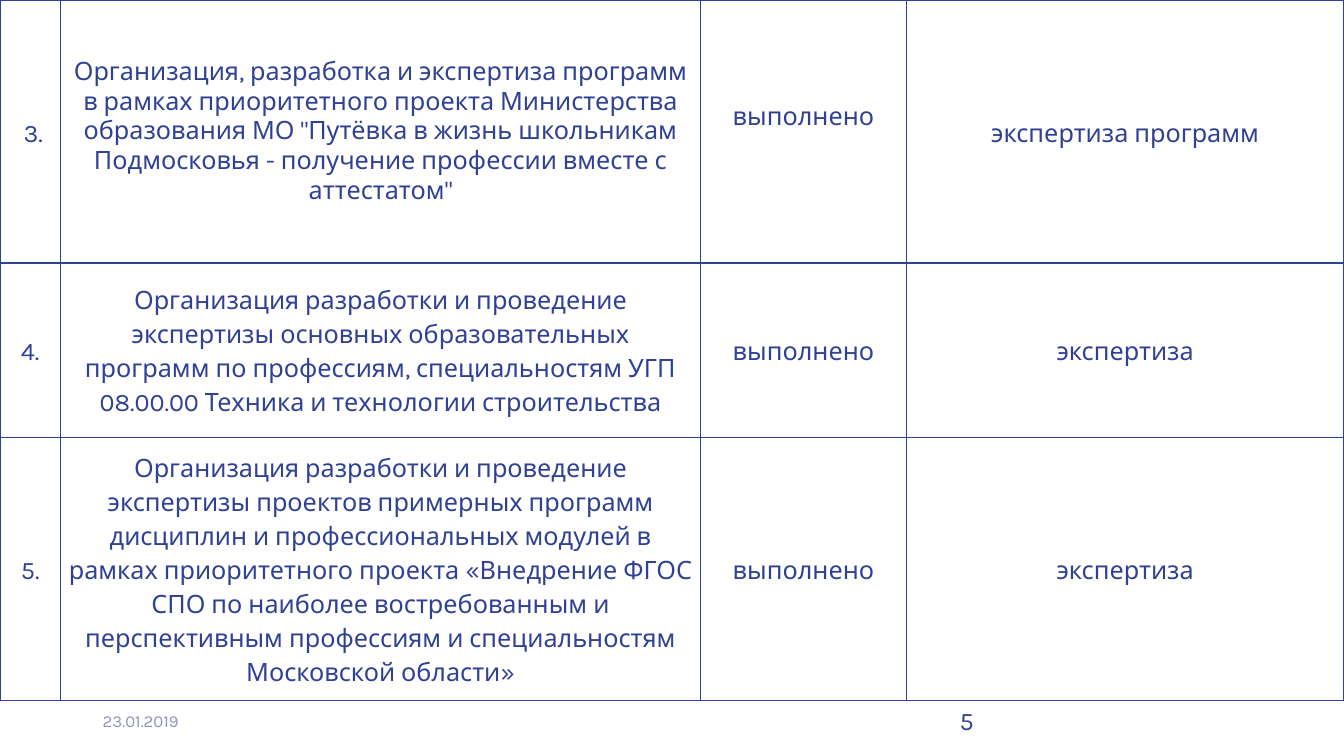
from pptx import Presentation
from pptx import util as u
from pptx.dml.color import RGBColor
from pptx.enum import text as t
from pptx.oxml import parse_xml
from pptx.oxml.ns import nsdecls

NAVY = RGBColor(0x30, 0x41, 0x94)
GREY = RGBColor(0x8F, 0x93, 0xB7)
FONT = "Karla"
WIDE, HIGH = 13.33, 7.5
COLS = [0.6, 6.35, 2.04, 4.34]
ROWS = [2.61, 1.73, 2.61]
FOOT = sum(ROWS)  # footer starts right under the table
PAD = 0.07
DONE = "выполнено"

TASKS = [
    ["3.",
     "Организация, разработка и экспертиза программ в рамках приоритетного "
     "проекта Министерства образования МО \"Путёвка в жизнь школьникам "
     "Подмосковья - получение профессии вместе с аттестатом\"",
     DONE, "экспертиза программ"],
    ["4.",
     "Организация разработки и проведение экспертизы основных "
     "образовательных программ по профессиям, специальностям УГП 08.00.00 "
     "Техника и технологии строительства",
     DONE, "экспертиза"],
    ["5.",
     "Организация разработки и проведение экспертизы проектов примерных "
     "программ дисциплин и профессиональных модулей в рамках приоритетного "
     "проекта «Внедрение ФГОС СПО по наиболее востребованным и "
     "перспективным профессиям и специальностям Московской области»",
     DONE, "экспертиза"],
]


def style(para, size, color):
    for run in para.runs:
        run.font.size = u.Pt(size)
        run.font.name = FONT
        run.font.color.rgb = color


def border(cell):
    props = cell._tc.get_or_add_tcPr()
    for i, side in enumerate(("lnL", "lnR", "lnT", "lnB")):
        props.insert(i, parse_xml(
            f'<a:{side} {nsdecls("a")} w="{u.Pt(1)}"><a:solidFill>'
            f'<a:srgbClr val="{NAVY}"/></a:solidFill></a:{side}>'))


def fill_cell(cell, words, space=1.15):
    cell.text_frame.text = words
    cell.vertical_anchor = t.MSO_ANCHOR.MIDDLE
    cell.margin_left = cell.margin_right = u.Inches(PAD)
    cell.margin_top = cell.margin_bottom = 0
    para = cell.text_frame.paragraphs[0]
    para.alignment = t.PP_ALIGN.CENTER
    para.line_spacing = space
    style(para, 18, NAVY)
    cell.fill.background()
    border(cell)


def add_tasks(slide):
    frame = slide.shapes.add_table(len(ROWS), len(COLS), 0, 0,
                                   u.Inches(WIDE), u.Inches(FOOT))
    table = frame.table
    table.first_row = table.horz_banding = False
    for col, width in zip(table.columns, COLS):
        col.width = u.Inches(width)
    for row, height in zip(table.rows, ROWS):
        row.height = u.Inches(height)
    for r, task in enumerate(TASKS):
        for c, words in enumerate(task):
            fill_cell(table.cell(r, c), words, 1.0 if (r, c) == (0, 1) else 1.15)
    # The first row's number sits a little right, its status a little high
    table.cell(0, 0).margin_left = u.Inches(PAD + 0.06)
    table.cell(0, 2).margin_bottom = u.Inches(0.34)


def add_note(slide, left, words, size, color, anchor):
    box = slide.shapes.add_textbox(u.Inches(left), u.Inches(FOOT),
                                   u.Inches(3), u.Inches(0.4))
    frame = box.text_frame
    frame.text = words
    frame.word_wrap = True
    frame.vertical_anchor = anchor
    style(frame.paragraphs[0], size, color)


def main():
    deck = Presentation()
    deck.slide_width, deck.slide_height = u.Inches(WIDE), u.Inches(HIGH)
    slide = deck.slides.add_slide(deck.slide_layouts[6])
    # Footer: date and page number
    add_note(slide, 0.92, "23.01.2019", 12, GREY, t.MSO_ANCHOR.MIDDLE)
    add_note(slide, 9.42, "5", 18, NAVY, t.MSO_ANCHOR.TOP)
    # Table of tasks
    add_tasks(slide)
    deck.save("out.pptx")


if __name__ == "__main__":
    main()
